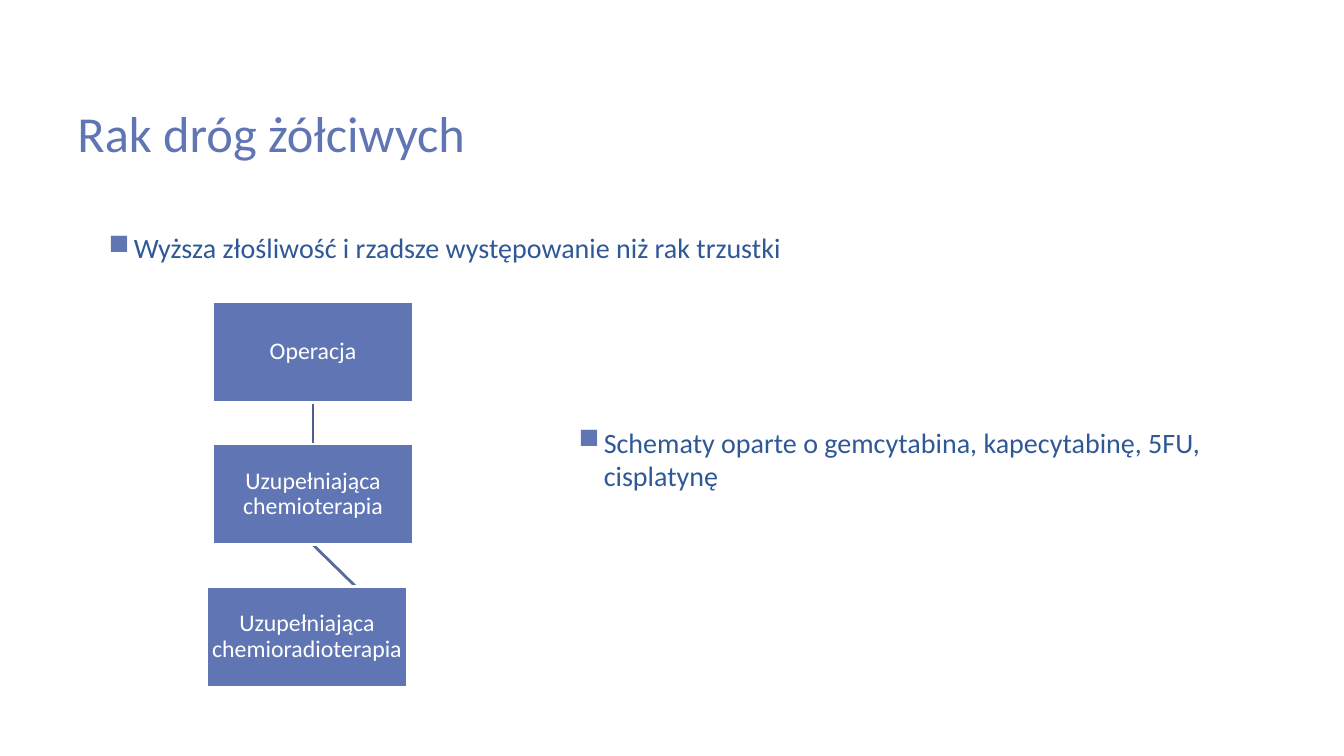
"""Build the slide on bile duct cancer treatment."""
from lxml.etree import SubElement
from pptx import Presentation
from pptx.dml.color import RGBColor
from pptx.enum.shapes import MSO_CONNECTOR, MSO_SHAPE
from pptx.enum.text import MSO_ANCHOR, PP_ALIGN
from pptx.oxml.ns import qn
from pptx.util import Inches, Pt

TITLE = "Rak dróg żółciwych"
BULLETS = [
    ("Wyższa złośliwość i rzadsze występowanie niż rak trzustki", (0.98, 2.24, 9.49, 0.77)),
    ("Schematy oparte o gemcytabina, kapecytabinę, 5FU, cisplatynę", (5.64, 4.17, 6.87, 0.77)),
]
STEPS = [
    ("Operacja", 2.11),
    ("Uzupełniająca chemioterapia", 2.11),
    ("Uzupełniająca chemioradioterapia", 2.05),
]
BOTTOM, RIGHT, TOP = 2, 3, 0
LINKS = [(0, 1, TOP, "link_dark"), (1, 2, RIGHT, "link")]
STEP_TOP, STEP_PITCH, STEP_W, STEP_H = 2.99, 1.415, 1.99, 1
COLORS = {"accent": "6076B4", "body": "2F5897", "white": "FFFFFF",
          "link_dark": "4D5E90", "link": "576BA3"}
FONT = "Calibri"


def rgb(name):
    return RGBColor.from_string(COLORS[name])


def add_run(p, text, size, color):
    r = p.add_run()
    r.text = text
    r.font.name, r.font.size = FONT, Pt(size)
    r.font.color.rgb = rgb(color)


def add_text(s, box, text, size, color, anchor=MSO_ANCHOR.TOP, bullet=False):
    tf = s.shapes.add_textbox(*map(Inches, box)).text_frame
    tf.word_wrap, tf.vertical_anchor = True, anchor
    p = tf.paragraphs[0]
    if bullet:
        pPr = p._p.get_or_add_pPr()
        pPr.set("marL", str(Inches(0.25)))
        pPr.set("indent", str(-Inches(0.25)))
        clr = SubElement(pPr, qn("a:buClr"))
        SubElement(clr, qn("a:srgbClr"), val=COLORS["accent"])
        SubElement(pPr, qn("a:buChar"), char="■")
    add_run(p, text, size, color)


def add_step(s, row, text, left):
    sp = s.shapes.add_shape(MSO_SHAPE.RECTANGLE, Inches(left),
                            Inches(STEP_TOP + row * STEP_PITCH), Inches(STEP_W), Inches(STEP_H))
    sp.shadow.inherit = False
    sp.fill.solid()
    sp.fill.fore_color.rgb = rgb("accent")
    sp.line.color.rgb, sp.line.width = rgb("white"), Pt(2)
    tf = sp.text_frame
    tf.word_wrap, tf.vertical_anchor = True, MSO_ANCHOR.MIDDLE
    tf.margin_left = tf.margin_right = tf.margin_top = tf.margin_bottom = Inches(0.01)
    p = tf.paragraphs[0]
    p.alignment, p.line_spacing = PP_ALIGN.CENTER, 0.9
    add_run(p, text, 17, "white")
    return sp


def add_link(s, steps, start, end, side, color):
    line = s.shapes.add_connector(MSO_CONNECTOR.STRAIGHT, 0, 0, 0, 0)
    line.begin_connect(steps[start], BOTTOM)
    line.end_connect(steps[end], side)
    line.line.color.rgb, line.line.width = rgb(color), Pt(2)
    SubElement(line._element.spPr, qn("a:effectLst"))
    steps[0]._element.addprevious(line._element)


def main():
    prs = Presentation()
    prs.slide_width, prs.slide_height = Inches(13.33), Inches(7.5)
    s = prs.slides.add_slide(prs.slide_layouts[6])
    add_text(s, (0.67, 0.41, 9.49, 1.25), TITLE, 36, "accent", MSO_ANCHOR.BOTTOM)
    for text, box in BULLETS:
        add_text(s, box, text, 20, "body", bullet=True)
    steps = [add_step(s, row, *step) for row, step in enumerate(STEPS)]
    for link in LINKS:
        add_link(s, steps, *link)
    prs.save("out.pptx")


if __name__ == "__main__":
    main()
